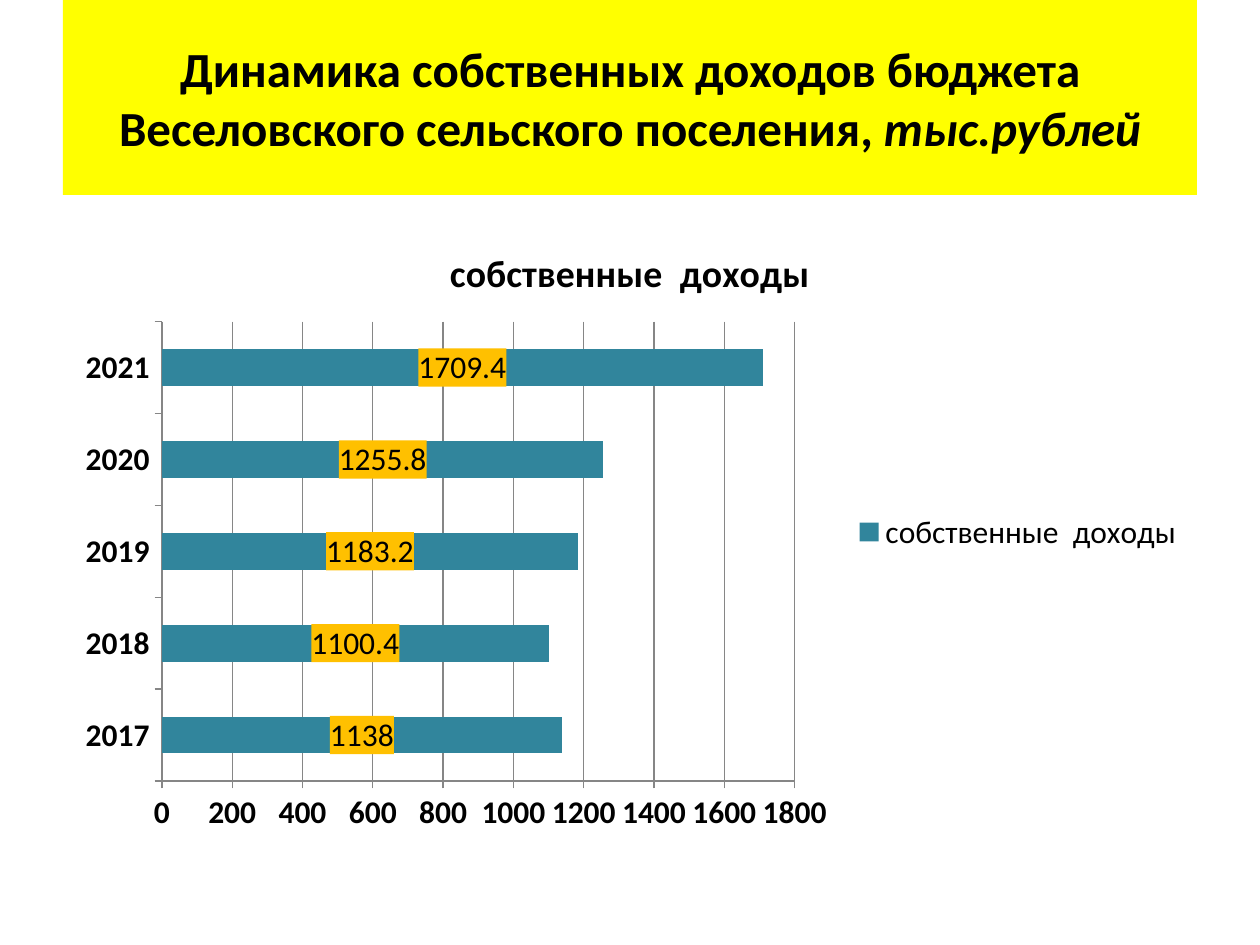
from pptx import Presentation
from pptx.chart.data import CategoryChartData
from pptx.dml.color import RGBColor
from pptx.enum.chart import XL_CHART_TYPE, XL_LABEL_POSITION, XL_LEGEND_POSITION, XL_TICK_MARK
from pptx.enum.shapes import MSO_SHAPE
from pptx.enum.text import MSO_ANCHOR, PP_ALIGN
from pptx.util import Emu, Pt

# Content: title runs as (text, italic)
TITLE = [
    ("Динамика собственных доходов бюджета Веселовского сельского поселения, ", False),
    ("тыс.рублей", True),
]
SERIES = "собственные  доходы"
INCOME = {"2017": 1138, "2018": 1100.4, "2019": 1183.2, "2020": 1255.8, "2021": 1709.4}

FONT = "Calibri"
BLACK, YELLOW, TEAL, AMBER, GRAY = "000000", "FFFF00", "31859C", "FFC000", "868686"

# Layout in px, 126 to the inch
SLIDE_W, SLIDE_H = 1260, 945
MARGIN = 63
BODY_W = SLIDE_W - 2 * MARGIN
TITLE_H = 195
CHART_Y, CHART_H = 220, 624


def px(n):
    return Emu(round(n * 914400 / 126))


def rgb(value):
    return RGBColor.from_string(value)


def set_font(font, size, bold=False, italic=False):
    font.name = FONT
    font.size = Pt(size)
    font.bold = bold
    font.italic = italic
    font.color.rgb = rgb(BLACK)


def paint(fmt, color):
    fmt.fill.solid()
    fmt.fill.fore_color.rgb = rgb(color)


def add_title(s):
    sp = s.shapes.add_shape(MSO_SHAPE.RECTANGLE, px(MARGIN), 0, px(BODY_W), px(TITLE_H))
    sp.shadow.inherit = False
    paint(sp, YELLOW)
    sp.line.fill.background()
    tf = sp.text_frame
    tf.word_wrap = True
    tf.vertical_anchor = MSO_ANCHOR.MIDDLE
    p = tf.paragraphs[0]
    p.alignment = PP_ALIGN.CENTER
    for text, italic in TITLE:
        r = p.add_run()
        r.text = text
        set_font(r.font, 28, bold=True, italic=italic)


def add_income_chart(s):
    data = CategoryChartData()
    data.categories = list(INCOME)
    data.add_series(SERIES, list(INCOME.values()))
    chart = s.shapes.add_chart(XL_CHART_TYPE.BAR_STACKED, px(MARGIN), px(CHART_Y),
                               px(BODY_W), px(CHART_H), data).chart
    set_font(chart.font, 18)

    # Heading and legend
    chart.has_title = True
    tf = chart.chart_title.text_frame
    tf.text = SERIES
    set_font(tf.paragraphs[0].runs[0].font, 21.6, bold=True)
    chart.has_legend = True
    chart.legend.position = XL_LEGEND_POSITION.RIGHT
    chart.legend.include_in_layout = False

    # Axes
    for axis in (chart.category_axis, chart.value_axis):
        set_font(axis.tick_labels.font, 18, bold=True)
        axis.major_tick_mark = XL_TICK_MARK.OUTSIDE
        axis.format.line.color.rgb = rgb(GRAY)
    value_axis = chart.value_axis
    value_axis.minimum_scale, value_axis.maximum_scale = 0, 1800
    value_axis.major_unit = 200
    value_axis.has_major_gridlines = True
    value_axis.major_gridlines.format.line.color.rgb = rgb(GRAY)

    # Bars and value labels
    plot = chart.plots[0]
    plot.gap_width, plot.overlap = 150, 100
    plot.vary_by_categories = False
    bars = plot.series[0]
    paint(bars.format, TEAL)
    labels = bars.data_labels
    labels.show_value = True
    labels.position = XL_LABEL_POSITION.CENTER
    labels.number_format, labels.number_format_is_linked = "General", False
    set_font(labels.font, 18)
    add_label_fill(labels, AMBER)


def add_label_fill(labels, color):
    # Data labels have no fill in the public API: spPr goes before txPr
    d = labels.font._element if hasattr(labels.font, "_element") else None
    d_lbls = labels._element if d is None else d
    tx_pr = d_lbls.xpath("descendant-or-self::c:txPr | ancestor::c:txPr")[0]
    tx_pr.addprevious(parse_xml(
        f'<c:spPr {nsdecls("c", "a")}><a:solidFill><a:srgbClr val="{color}"/>'
        '</a:solidFill></c:spPr>'))


from pptx.oxml import parse_xml
from pptx.oxml.ns import nsdecls

if __name__ == "__main__":
    prs = Presentation()
    prs.slide_width, prs.slide_height = px(SLIDE_W), px(SLIDE_H)
    s = prs.slides.add_slide(prs.slide_layouts[6])
    add_title(s)
    add_income_chart(s)
    prs.save("out.pptx")
